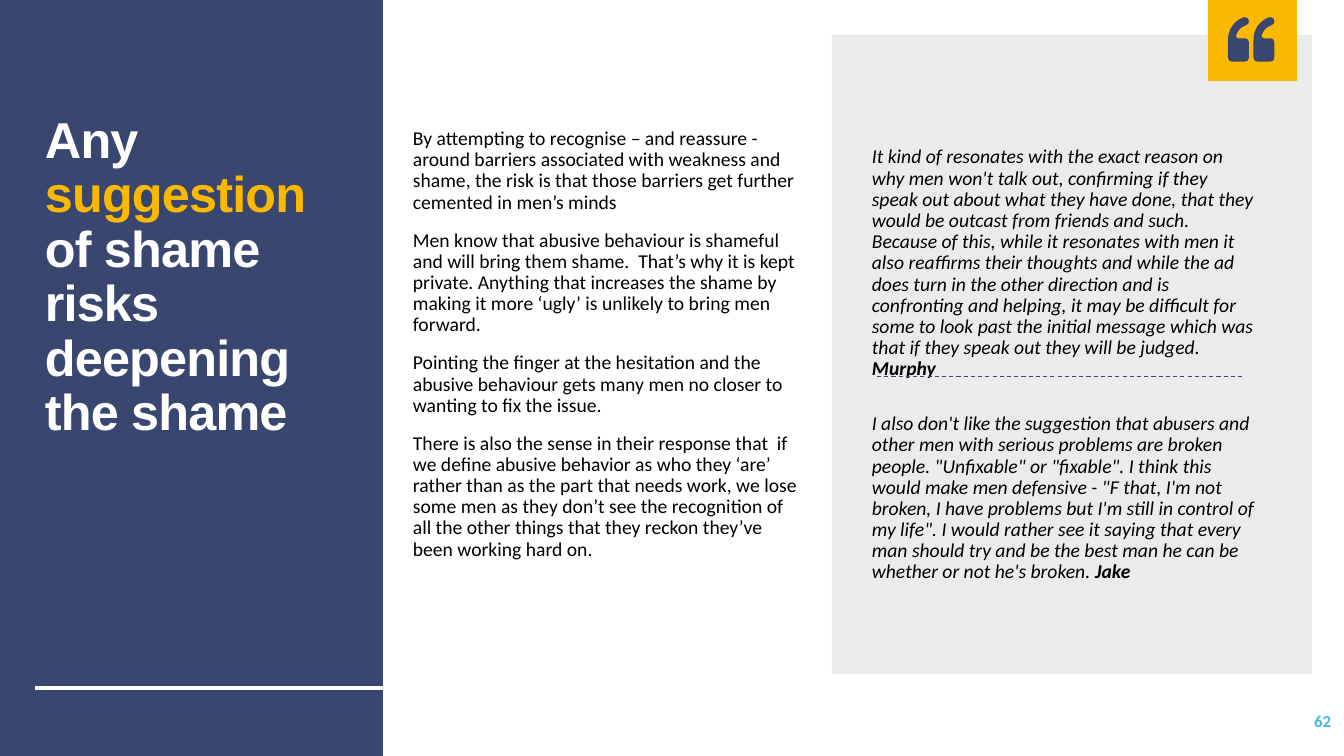
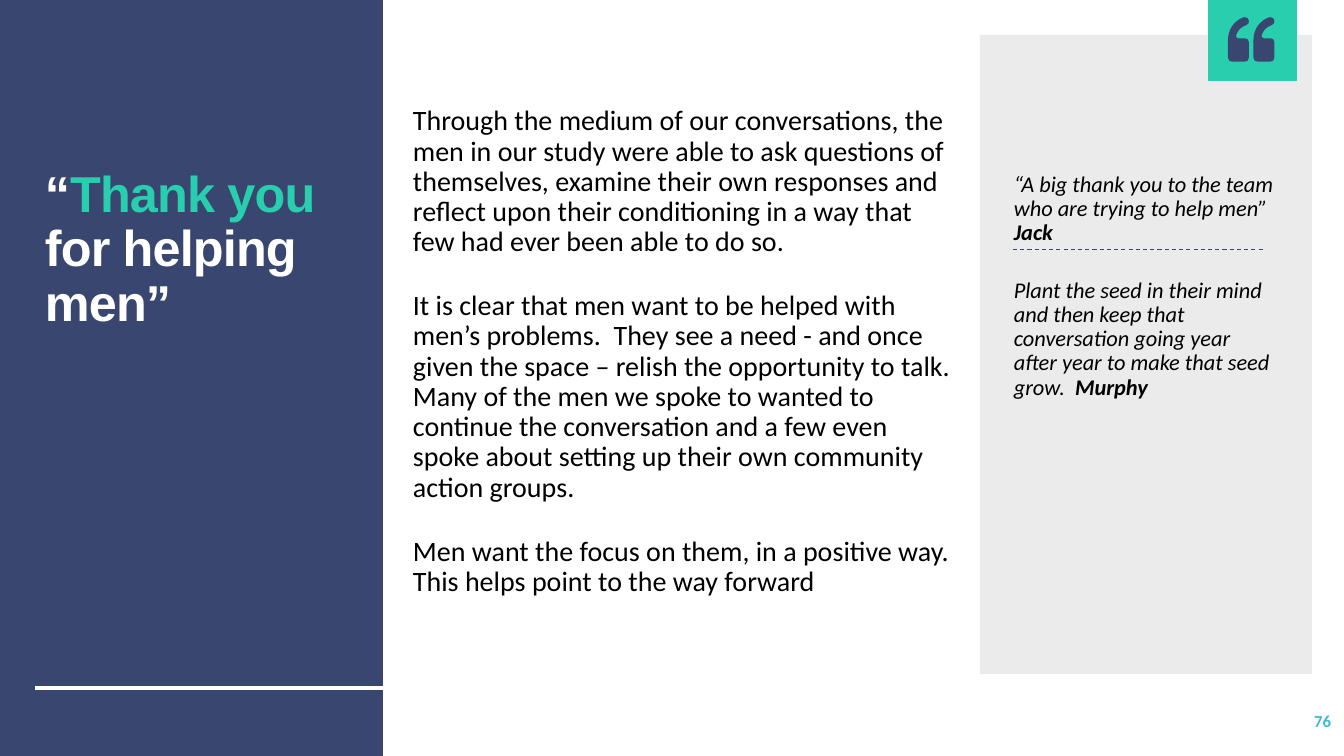
from pptx import Presentation
from pptx.dml.color import RGBColor as RGB
from pptx.enum.dml import MSO_LINE_DASH_STYLE as DASH
from pptx.enum.shapes import MSO_CONNECTOR as CON, MSO_SHAPE as SHP
from pptx.enum.text import MSO_ANCHOR as ANC, PP_ALIGN as AL
from pptx.oxml.ns import qn
from pptx.util import Emu, Pt
from lxml import etree

# Shared measures, colours and text styles
W, H = 1344, 756
PX = 12192000 / W
PANEL_W, PANEL_TOP, PANEL_RIGHT, PANEL_H = 383, 35, 1312, 639
C = dict(navy="39466F", white="FFFFFF", black="000000", grey="EBEBEB",
         yellow="FAB900", green="28CEAE", blue="40BAD2")
TITLE = dict(name="Arial", size=Pt(36), bold=True, color="white", spc=-60)
BODY = dict(name="Calibri", color="black")
QUOTE = dict(BODY, italic=True)
NUMBER = dict(name="Calibri", size=Pt(12), bold=True, color="blue")

# One quotation mark in tenths of a px: 2 numbers make a line, 6 a curve
MARK = [(0, 403), (0, 430, 18, 444, 40, 444), (170, 444),
        (192, 444, 210, 430, 210, 403), (210, 252),
        (210, 228, 192, 211, 170, 211), (105, 211),
        (92, 211, 82, 202, 82, 189), (82, 180),
        (98, 132, 130, 97, 182, 80), (200, 72, 210, 60, 210, 40),
        (210, 16, 192, 0, 170, 0), (163, 0, 157, 1, 151, 3),
        (60, 40, 0, 120, 0, 232)]
MARK_X, MARK_Y, MARK_STEP = 12280, 172, 255

SLIDES = [
    dict(
        number="62", accent="yellow", panel_x=832,
        title_box=(35, 110, 323, 507),
        title=[("Any ", {}), ("suggestion ", dict(color="yellow")),
               ("of shame risks deepening the shame", {})],
        body_box=(403, 55, 410, 579), body_size=14, body_gap=12,
        body=[
            "By attempting to recognise – and reassure - around barriers "
            "associated with weakness and shame, the risk is that those "
            "barriers get further cemented in men’s minds",
            "Men know that abusive behaviour is shameful and will bring them "
            "shame.  That’s why it is kept private. Anything that increases "
            "the shame by making it more ‘ugly’ is unlikely to bring men "
            "forward.",
            "Pointing the finger at the hesitation and the abusive behaviour "
            "gets many men no closer to wanting to fix the issue.",
            "There is also the sense in their response that  if we define "
            "abusive behavior as who they ‘are’ rather than as the part that "
            "needs work, we lose some men as they don’t see the recognition "
            "of all the other things that they reckon they’ve been working "
            "hard on."],
        quote_box=(862, 142, 404, 500), quote_size=14,
        quotes=[
            ("It kind of resonates with the exact reason on why men won't "
             "talk out, confirming if they speak out about what they have "
             "done, that they would be outcast from friends and such. "
             "Because of this, while it resonates with men it also reaffirms "
             "their thoughts and while the ad does turn in the other "
             "direction and is confronting and helping, it may be difficult "
             "for some to look past the initial message which was that if "
             "they speak out they will be judged. ", "Murphy"),
            ("I also don't like the suggestion that abusers and other men "
             "with serious problems are broken people. \"Unfixable\" or "
             "\"fixable\". I think this would make men defensive - \"F that, "
             "I'm not broken, I have problems but I'm still in control of my "
             "life\". I would rather see it saying that every man should try "
             "and be the best man he can be whether or not he's broken. ",
             "Jake")],
        divider=(877, 1244, 377)),
    dict(
        number="76", accent="green", panel_x=980,
        title_box=(35, 164, 318, 453),
        title=[("“", {}), ("Thank you ", dict(color="green")),
               ("for helping men”", {})],
        body_box=(403, 61, 558, 582), body_size=20, body_gap=24,
        body=[
            "Through the medium of our conversations, the men in our study "
            "were able to ask questions of themselves, examine their own "
            "responses and reflect upon their conditioning in a way that few "
            "had ever been able to do so.",
            "It is clear that men want to be helped with men’s problems.  "
            "They see a need - and once given the space – relish the "
            "opportunity to talk. Many of the men we spoke to wanted to "
            "continue the conversation and a few even spoke about setting up "
            "their own community action groups.",
            "Men want the focus on them, in a positive way. This helps point "
            "to the way forward"],
        quote_box=(1004, 168, 282, 473), quote_size=16,
        quotes=[
            ("“A big thank you to the team who are trying to help men” ",
             "Jack"),
            ("Plant the seed in their mind and then keep that conversation "
             "going year after year to make that seed grow.  ", "Murphy")],
        divider=(1013, 1264, 250)),
]


def px(*lengths):
    return [Emu(round(n * PX)) for n in lengths]


def add_text(s, box, paras, style, gap=0, anchor=ANC.TOP, align=AL.LEFT,
             spacing=0.9):
    tf = s.shapes.add_textbox(*px(*box)).text_frame
    tf.word_wrap, tf.vertical_anchor = True, anchor
    for i, runs in enumerate(paras):
        p = tf.add_paragraph() if i else tf.paragraphs[0]
        p.alignment, p.line_spacing = align, spacing
        p.space_before = Pt(gap if i else 0)
        for text, changes in runs:
            r = p.add_run()
            r.text = text
            for key, value in {**style, **changes}.items():
                if key == "color":
                    r.font.color.rgb = RGB.from_string(C[value])
                elif key == "spc":
                    r._r.get_or_add_rPr().set("spc", str(value))
                else:
                    setattr(r.font, key, value)


prs = Presentation()
prs.slide_width, prs.slide_height = px(W, H)

for d in SLIDES:
    s = prs.slides.add_slide(prs.slide_layouts[6])

    # Quote panel and badge
    panel_x = d["panel_x"]
    rects = [((panel_x, PANEL_TOP, PANEL_RIGHT - panel_x, PANEL_H), "grey"),
             ((1208, 0, 89, 81), d["accent"]),
             ((0, 0, PANEL_W, H), "navy")]
    filled = [(s.shapes.add_shape(SHP.RECTANGLE, *px(*box)), color)
              for box, color in rects]

    # Quotation marks: straight outline first, then its curved segments
    starts = [(MARK_X, MARK_Y), (MARK_X + MARK_STEP, MARK_Y)]
    outlines = [[(x + seg[-2], y + seg[-1]) for seg in MARK] for x, y in starts]
    fb = s.shapes.build_freeform(*outlines[0][0], scale=PX / 10)
    fb.add_line_segments(outlines[0][1:], close=True)
    fb.move_to(*outlines[1][0])
    fb.add_line_segments(outlines[1][1:], close=True)
    marks = fb.convert_to_shape()
    filled.append((marks, "navy"))
    lines = list(marks._element.iter(qn("a:lnTo")))
    segments = [(dx, seg) for dx in (0, MARK_STEP) for seg in MARK[1:]]
    for line, (dx, seg) in zip(lines, segments):
        if len(seg) == 6:
            curve = etree.Element(qn("a:cubicBezTo"))
            for x, y in zip(seg[::2], seg[1::2]):
                etree.SubElement(curve, qn("a:pt"), x=str(x + dx), y=str(y))
            line.getparent().replace(line, curve)

    for shape, color in filled:
        shape.shadow.inherit = False
        shape.fill.solid()
        shape.fill.fore_color.rgb = RGB.from_string(C[color])
        shape.line.fill.background()

    # Title, body and quotes
    add_text(s, d["title_box"], [d["title"]], TITLE)
    add_text(s, d["body_box"], [[(text, {})] for text in d["body"]],
             dict(BODY, size=Pt(d["body_size"])), d["body_gap"], ANC.MIDDLE)
    add_text(s, d["quote_box"],
             [[(text, {}), (who, dict(bold=True))] for text, who in d["quotes"]],
             dict(QUOTE, size=Pt(d["quote_size"])), 24)

    # Title rule and quote divider
    x1, x2, y = d["divider"]
    for ends, color, width, dash in [
            ((35, 688, PANEL_W, 688), "white", 3, None),
            ((x1, y, x2, y), "navy", 0.75, DASH.DASH)]:
        ln = s.shapes.add_connector(CON.STRAIGHT, *px(*ends))
        ln.line.color.rgb = RGB.from_string(C[color])
        ln.line.width, ln.line.dash_style = Pt(width), dash
        etree.SubElement(ln._element.spPr, qn("a:effectLst"))

    # Page number
    add_text(s, (1173, 701, 168, 40), [[(d["number"], {})]], NUMBER,
             anchor=ANC.MIDDLE, align=AL.RIGHT, spacing=1)

prs.save("out.pptx")
